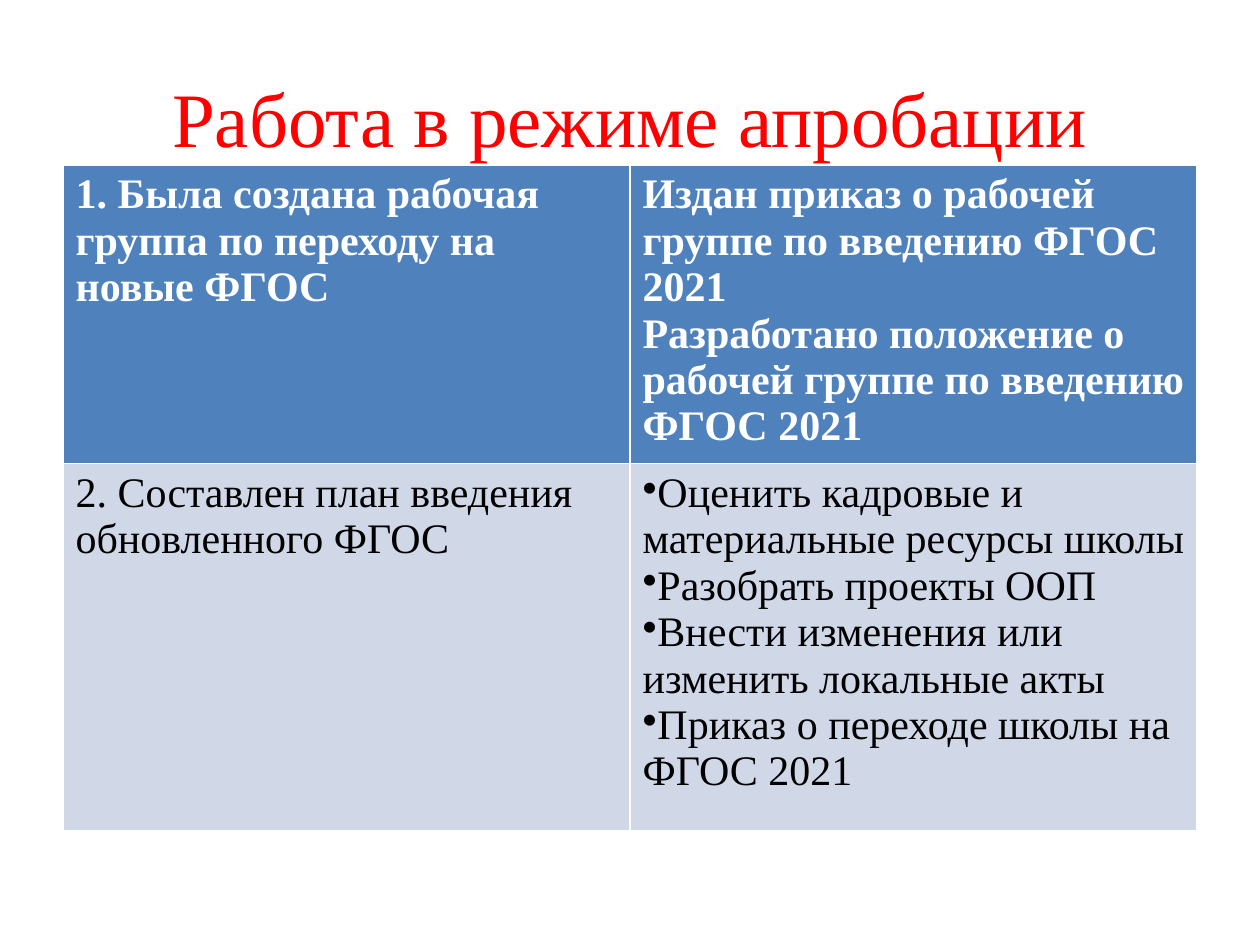
from lxml import etree
from pptx import Presentation
from pptx.dml.color import RGBColor
from pptx.enum.text import MSO_ANCHOR, PP_ALIGN
from pptx.oxml.ns import qn
from pptx.util import Inches, Pt

CENTER = PP_ALIGN.CENTER
MIDDLE = MSO_ANCHOR.MIDDLE
FONT = "Times New Roman"
MARGIN = Inches(0.5)
ROW_HEIGHTS = [2.37, 2.91]
ROW_FILLS = ["4F81BD", "D0D8E8"]
ROW_COLORS = ["FFFFFF", "000000"]
CELL_TEXTS = [
    [
        ["1. Была создана рабочая группа по переходу на новые ФГОС"],
        [
            "Издан приказ о рабочей группе по введению ФГОС 2021",
            "Разработано положение о рабочей группе по введению ФГОС 2021",
        ],
    ],
    [
        ["2. Составлен план введения обновленного ФГОС"],
        [
            "Оценить кадровые и материальные ресурсы школы",
            "Разобрать проекты ООП",
            "Внести изменения или изменить локальные акты",
            "Приказ о переходе школы на ФГОС 2021",
        ],
    ],
]


def format_font(paragraph, size, color, bold=False):
    font = paragraph.font
    font.name = FONT
    font.size = Pt(size)
    font.bold = bold
    font.color.rgb = RGBColor.from_string(color)


presentation = Presentation()
presentation.slide_width = Inches(10)
presentation.slide_height = Inches(7.5)
content_width = presentation.slide_width - 2 * MARGIN
slide = presentation.slides.add_slide(presentation.slide_layouts[5])

title = slide.shapes.title
title.left, title.top = MARGIN, Inches(0.3)
title.width, title.height = content_width, Inches(1.25)
title.text_frame.text = "Работа в режиме апробации"
title.text_frame.vertical_anchor = MIDDLE
title.text_frame.paragraphs[0].alignment = CENTER
format_font(title.text_frame.paragraphs[0], 44, "FF0000")

# The default table style supplies the white borders and the thick header line.
table = slide.shapes.add_table(
    2, 2, MARGIN, Inches(1.31), content_width, Inches(sum(ROW_HEIGHTS))
).table

for row_index, row_texts in enumerate(CELL_TEXTS):
    table.rows[row_index].height = Inches(ROW_HEIGHTS[row_index])
    is_header = row_index == 0
    for column_index, texts in enumerate(row_texts):
        cell = table.cell(row_index, column_index)
        cell.fill.solid()
        cell.fill.fore_color.rgb = RGBColor.from_string(ROW_FILLS[row_index])
        cell.text_frame.text = "\n".join(texts)
        for paragraph in cell.text_frame.paragraphs:
            if not is_header and len(texts) > 1:
                properties = paragraph._p.get_or_add_pPr()
                etree.SubElement(properties, qn("a:buChar"), char="•")
            format_font(paragraph, 24, ROW_COLORS[row_index], bold=is_header)

presentation.save("out.pptx")
